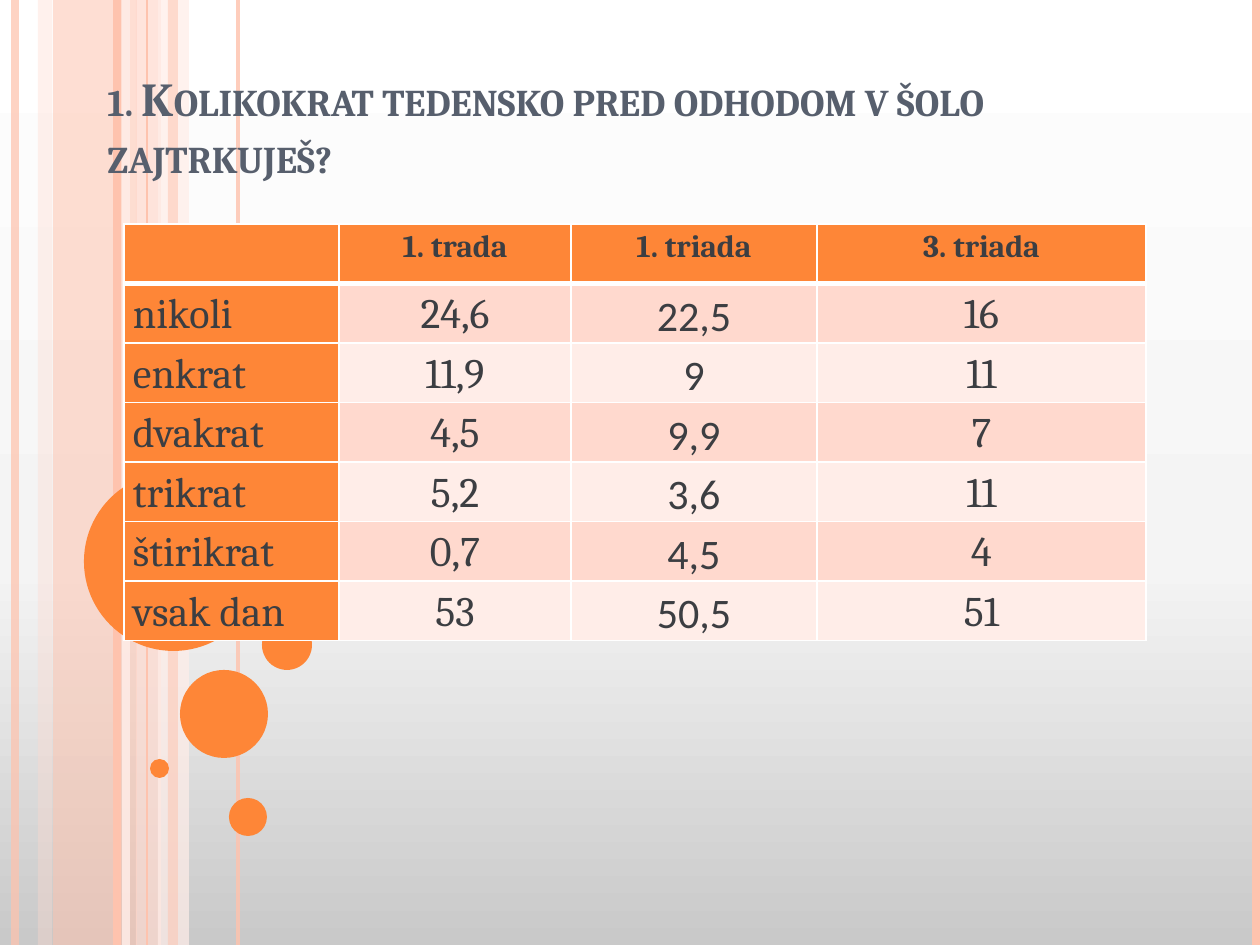
from copy import deepcopy

from lxml.etree import SubElement
from pptx import Presentation
from pptx.dml.color import RGBColor
from pptx.enum.shapes import MSO_CONNECTOR as CONNECTOR, MSO_SHAPE as SHAPE
from pptx.enum.text import MSO_ANCHOR as ANCHOR, PP_ALIGN as ALIGN
from pptx.oxml.ns import qn
from pptx.util import Pt

EMU_PER_PX = 914400 / 126
SLIDE_WIDTH, SLIDE_HEIGHT = 1260, 945
ORANGE, PEACH, BLUSH, PALE = "FE8637", "FEC3AE", "FFD9CE", "FFEDE8"
TITLE_COLOR, TABLE_COLOR, WHITE = "575F6D", "3C3E42", "FFFFFF"

BACKGROUND_STOPS = [(0, "C9C9C9"), (0.4, "F4F4F4"), (1, WHITE)]
BANDS = [(53, 84, PEACH, 54), (38, 14, BLUSH, 36), (136, 25, BLUSH, 70), (158, 31, PALE, 71)]
STRIPES = [
    (15, PEACH, 4.5, 73),
    (126, PALE, 4.5, 83),
    (117, PEACH, 4.5, 100),
    (238, PEACH, 2.25, 82),
    (147, PEACH, 0.75, 100),
    (1256, PEACH, 4.5, 100),
]
FRONT_BAND = (168, 10, PEACH, 51)
BUBBLES = [(84, 472, 179), (180, 670, 88), (150, 759, 19), (229, 798, 38), (262, 620, 50)]

TITLE = "1. Kolikokrat tedensko pred odhodom v šolo zajtrkuješ?"
COLUMN_WIDTHS = [215, 232, 246, 329]
TABLE_HEIGHT = 417
BREAKFASTS = [
    ["", "1. trada", "1. triada", "3. triada"],
    ["nikoli", "24,6", "22,5", "16"],
    ["enkrat", "11,9", "9", "11"],
    ["dvakrat", "4,5", "9,9", "7"],
    ["trikrat", "5,2", "3,6", "11"],
    ["štirikrat", "0,7", "4,5", "4"],
    ["vsak dan", "53", "50,5", "51"],
]


def px(length):
    """Turn pixels into EMU."""
    return round(length * EMU_PER_PX)


def rgb(value):
    """Turn a hex string into a colour."""
    return RGBColor.from_string(value)


def paint(fill, color):
    """Give a fill one solid colour."""
    fill.solid()
    fill.fore_color.rgb = rgb(color)


def set_opacity(element, percent):
    """Make the first colour below an element partly transparent."""
    if percent < 100:
        color = element.find(".//" + qn("a:srgbClr"))
        SubElement(color, qn("a:alpha"), val=str(percent * 1000))


def set_background(slide):
    """Fill the background with a gradient rising from the bottom edge."""
    fill = slide.background.fill
    fill.gradient()
    fill.gradient_angle = 90
    stops = slide.element.find(".//" + qn("a:gsLst"))
    stops.append(deepcopy(stops[0]))
    for stop, (position, color) in zip(fill.gradient_stops, BACKGROUND_STOPS):
        stop.position = position
        stop.color.rgb = rgb(color)


def add_plain_shape(slide, kind, left, top, width, height, color, opacity=100):
    """Add a preset shape without outline or shadow."""
    shape = slide.shapes.add_shape(kind, px(left), px(top), px(width), px(height))
    shape.shadow.inherit = False
    paint(shape.fill, color)
    set_opacity(shape.fill._xPr, opacity)
    shape.line.fill.background()


def add_band(slide, left, width, color, opacity):
    """Add a translucent band over the full slide height."""
    add_plain_shape(slide, SHAPE.RECTANGLE, left, 0, width, SLIDE_HEIGHT, color, opacity)


def add_stripe(slide, x, color, weight, opacity):
    """Add a vertical line over the full slide height."""
    stripe = slide.shapes.add_connector(CONNECTOR.STRAIGHT, px(x), 0, px(x), px(SLIDE_HEIGHT))
    stripe.line.width = Pt(weight)
    paint(stripe.line.fill, color)
    properties = stripe._element.spPr
    set_opacity(properties, opacity)
    SubElement(properties, qn("a:effectLst"))


def format_run(paragraph, font_name, size, color, bold):
    """Set the typeface, size, colour and weight of the first run."""
    font = paragraph.runs[0].font
    font.name, font.size, font.bold = font_name, Pt(size), bold
    font.color.rgb = rgb(color)


def add_title(slide):
    """Add the question in small capitals."""
    frame = slide.shapes.add_textbox(px(95), px(55), px(1071), px(189)).text_frame
    frame.word_wrap = True
    frame.vertical_anchor = ANCHOR.BOTTOM
    frame.margin_bottom = px(61)
    frame.text = TITLE
    question = frame.paragraphs[0]
    format_run(question, "Cambria", 27, TITLE_COLOR, True)
    question.runs[0].font._element.set("cap", "small")


def set_borders(cell, row):
    """Draw white cell edges, heavier below the header row."""
    weights = {"L": 1, "R": 1, "T": 3 if row == 1 else 1, "B": 3 if row == 0 else 1}
    properties = cell._tc.get_or_add_tcPr()
    for side, weight in weights.items():
        edge = SubElement(properties, qn(f"a:ln{side}"), w=str(Pt(weight)))
        SubElement(SubElement(edge, qn("a:solidFill")), qn("a:srgbClr"), val=WHITE)


def fill_cell(cell, row, column, wording):
    """Style one table cell by its place and write its wording."""
    set_borders(cell, row)
    heading = row == 0 or column == 0
    paint(cell.fill, ORANGE if heading else BLUSH if row % 2 else PALE)
    if not wording:
        return
    cell.margin_left = cell.margin_right = px(9)
    cell.margin_top = cell.margin_bottom = 0
    cell.text = wording
    entry = cell.text_frame.paragraphs[0]
    entry.alignment = ALIGN.CENTER if column else ALIGN.LEFT
    entry.line_spacing = 1.15
    font_name = "Calibri" if row and column == 2 else "Cambria"
    format_run(entry, font_name, 24 if row else 18, TABLE_COLOR, row == 0)


def add_breakfast_table(slide):
    """Add the table of weekly breakfasts by school level."""
    row_count = len(BREAKFASTS)
    table = slide.shapes.add_table(
        row_count, len(COLUMN_WIDTHS), px(124), px(224), px(sum(COLUMN_WIDTHS)), px(TABLE_HEIGHT)
    ).table
    for column, width in zip(table.columns, COLUMN_WIDTHS):
        column.width = px(width)
    for row, entries in enumerate(BREAKFASTS):
        table.rows[row].height = px(TABLE_HEIGHT / row_count)
        for column, wording in enumerate(entries):
            fill_cell(table.cell(row, column), row, column, wording)


def main():
    """Build and save the slide."""
    deck = Presentation()
    deck.slide_width, deck.slide_height = px(SLIDE_WIDTH), px(SLIDE_HEIGHT)
    slide = deck.slides.add_slide(deck.slide_layouts[6])
    set_background(slide)
    for band in BANDS:
        add_band(slide, *band)
    for stripe in STRIPES:
        add_stripe(slide, *stripe)
    add_band(slide, *FRONT_BAND)
    for left, top, size in BUBBLES:
        add_plain_shape(slide, SHAPE.OVAL, left, top, size, size, ORANGE)
    add_title(slide)
    add_breakfast_table(slide)
    deck.save("out.pptx")


if __name__ == "__main__":
    main()
